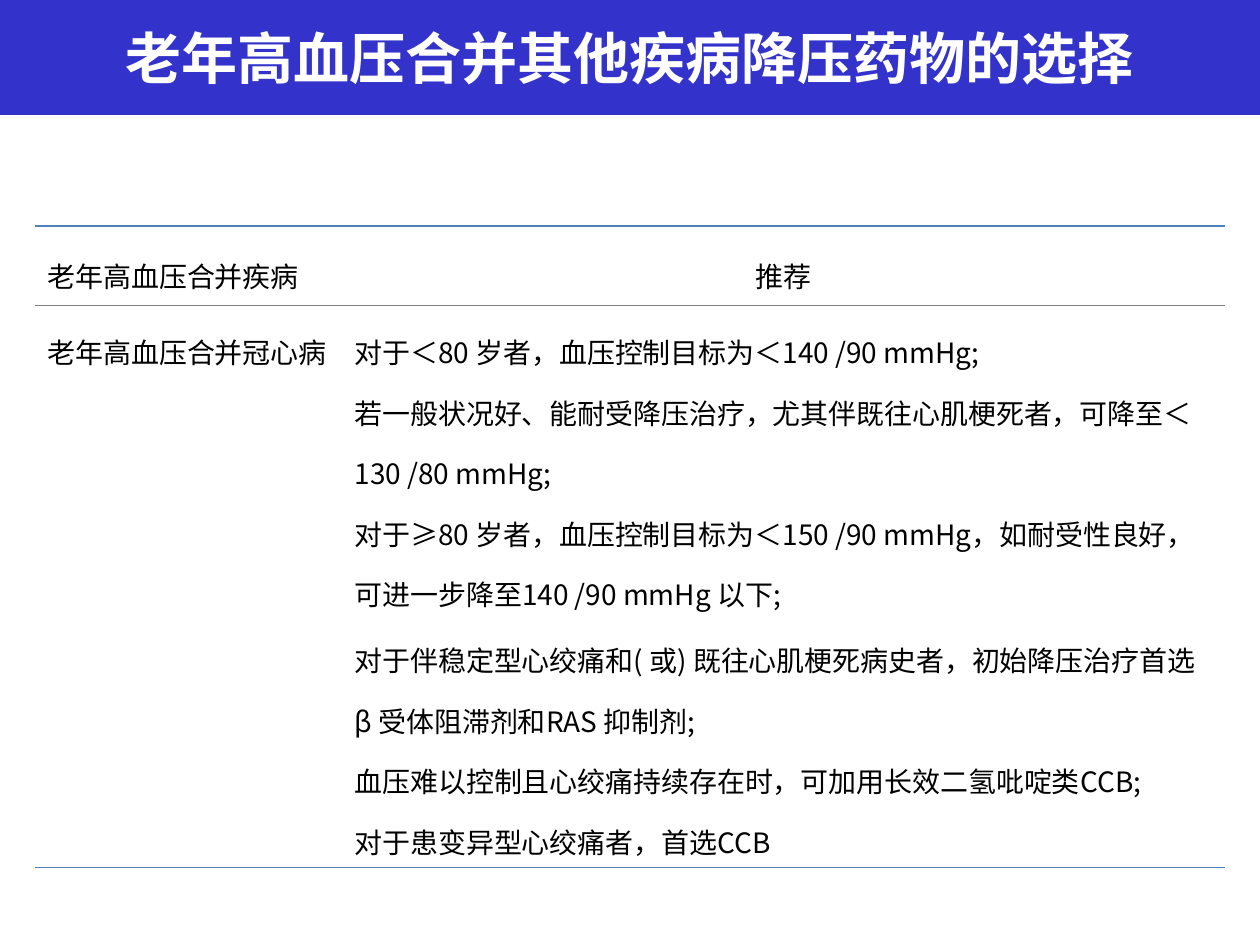
from dataclasses import dataclass

from lxml.etree import SubElement
from pptx import Presentation
from pptx.dml.color import RGBColor
from pptx.enum.shapes import MSO_SHAPE
from pptx.enum.text import MSO_ANCHOR, PP_ALIGN
from pptx.oxml.ns import qn
from pptx.util import Emu, Pt

TITLE = "老年高血压合并其他疾病降压药物的选择"
HEADERS = ["老年高血压合并疾病", "推荐"]
DISEASE = "老年高血压合并冠心病"
RECOMMENDATIONS = [
    "对于＜80 岁者，血压控制目标为＜140 /90 mmHg;",
    "若一般状况好、能耐受降压治疗，尤其伴既往心肌梗死者，可降至＜130 /80 mmHg;",
    "对于≥80 岁者，血压控制目标为＜150 /90 mmHg，如耐受性良好，可进一步降至140 /90 mmHg 以下;",
    "对于伴稳定型心绞痛和( 或) 既往心肌梗死病史者，初始降压治疗首选β 受体阻滞剂和RAS 抑制剂;",
    "血压难以控制且心绞痛持续存在时，可加用长效二氢吡啶类CCB;",
    "对于患变异型心绞痛者，首选CCB",
]
SPACED_RECOMMENDATION = 3

SLIDE_SIZE = (1260, 945)
BANNER_HEIGHT = 115
TABLE_LEFT, TABLE_TOP = 35, 226
COLUMN_WIDTHS = [307, 883]
ROW_HEIGHTS = [79, 562]
HANGING_INDENT = 48


@dataclass(frozen=True)
class Theme:
    font: str = "Noto Sans CJK SC"
    banner: str = "3333CC"
    paper: str = "FFFFFF"
    ink: str = "000000"
    rule: str = "4F81BD"
    divider: str = "7F7F7F"
    title_size: int = 32
    body_size: int = 16
    line_spacing: float = 1.5
    group_gap: float = 3.2
    rule_width: float = 1
    divider_width: float = 0.5


THEME = Theme()
TOP_RULE = BOTTOM_RULE = (THEME.rule, THEME.rule_width)
DIVIDER = (THEME.divider, THEME.divider_width)
ROW_BORDERS = [{"T": TOP_RULE, "B": DIVIDER}, {"T": DIVIDER, "B": BOTTOM_RULE}]


def px(value):
    return Emu(round(value * 914400 / 126))


def color(value):
    return RGBColor.from_string(value)


def add_text(paragraph, text, size, ink, bold=False):
    run = paragraph.add_run()
    run.text = text
    run.font.name = THEME.font
    run.font.size = Pt(size)
    run.font.bold = bold
    run.font.color.rgb = color(ink)
    SubElement(run.font._element, qn("a:ea"), typeface=THEME.font)


def add_banner(slide):
    banner = slide.shapes.add_shape(
        MSO_SHAPE.RECTANGLE, 0, 0, px(SLIDE_SIZE[0]), px(BANNER_HEIGHT))
    banner.shadow.inherit = False
    banner.fill.solid()
    banner.fill.fore_color.rgb = color(THEME.banner)
    banner.line.fill.background()
    frame = banner.text_frame
    frame.word_wrap = True
    frame.vertical_anchor = MSO_ANCHOR.MIDDLE
    paragraph = frame.paragraphs[0]
    paragraph.alignment = PP_ALIGN.CENTER
    add_text(paragraph, TITLE, THEME.title_size, THEME.paper, bold=True)


def style_cell(cell, borders):
    properties = cell._tc.get_or_add_tcPr()
    for side in "LRTB":
        line = SubElement(properties, qn(f"a:ln{side}"))
        if side in borders:
            line_color, width = borders[side]
            line.set("w", str(Pt(width)))
            fill = SubElement(line, qn("a:solidFill"))
            SubElement(fill, qn("a:srgbClr"), val=line_color)
        else:
            SubElement(line, qn("a:noFill"))
    cell.fill.solid()
    cell.fill.fore_color.rgb = color(THEME.paper)


def fill_cell(cell, texts, hanging):
    frame = cell.text_frame
    for index, text in enumerate(texts):
        paragraph = frame.add_paragraph() if index else frame.paragraphs[0]
        paragraph.line_spacing = THEME.line_spacing
        if index == SPACED_RECOMMENDATION:
            paragraph.space_before = Pt(THEME.group_gap)
        if hanging:
            properties = paragraph._p.get_or_add_pPr()
            properties.set("marL", str(px(HANGING_INDENT)))
            properties.set("indent", str(px(-HANGING_INDENT)))
        add_text(paragraph, text, THEME.body_size, THEME.ink)


def add_recommendation_table(slide):
    rows = [[[header] for header in HEADERS], [[DISEASE], RECOMMENDATIONS]]
    table = slide.shapes.add_table(
        len(rows), len(HEADERS), px(TABLE_LEFT), px(TABLE_TOP),
        px(sum(COLUMN_WIDTHS)), px(sum(ROW_HEIGHTS))).table
    table.first_row = False
    table.horz_banding = False
    for column, width in zip(table.columns, COLUMN_WIDTHS):
        column.width = px(width)
    for row, height in zip(table.rows, ROW_HEIGHTS):
        row.height = px(height)
    for row_index, row in enumerate(rows):
        for column_index, texts in enumerate(row):
            cell = table.cell(row_index, column_index)
            style_cell(cell, ROW_BORDERS[row_index])
            fill_cell(cell, texts, hanging=len(texts) == 1)
            cell.vertical_anchor = MSO_ANCHOR.MIDDLE
    table.cell(1, 0).vertical_anchor = MSO_ANCHOR.TOP
    table.cell(0, 1).text_frame.paragraphs[0].alignment = PP_ALIGN.CENTER


def main():
    presentation = Presentation()
    presentation.slide_width, presentation.slide_height = map(px, SLIDE_SIZE)
    slide = presentation.slides.add_slide(presentation.slide_layouts[6])
    add_recommendation_table(slide)
    add_banner(slide)
    presentation.save("out.pptx")


if __name__ == "__main__":
    main()
